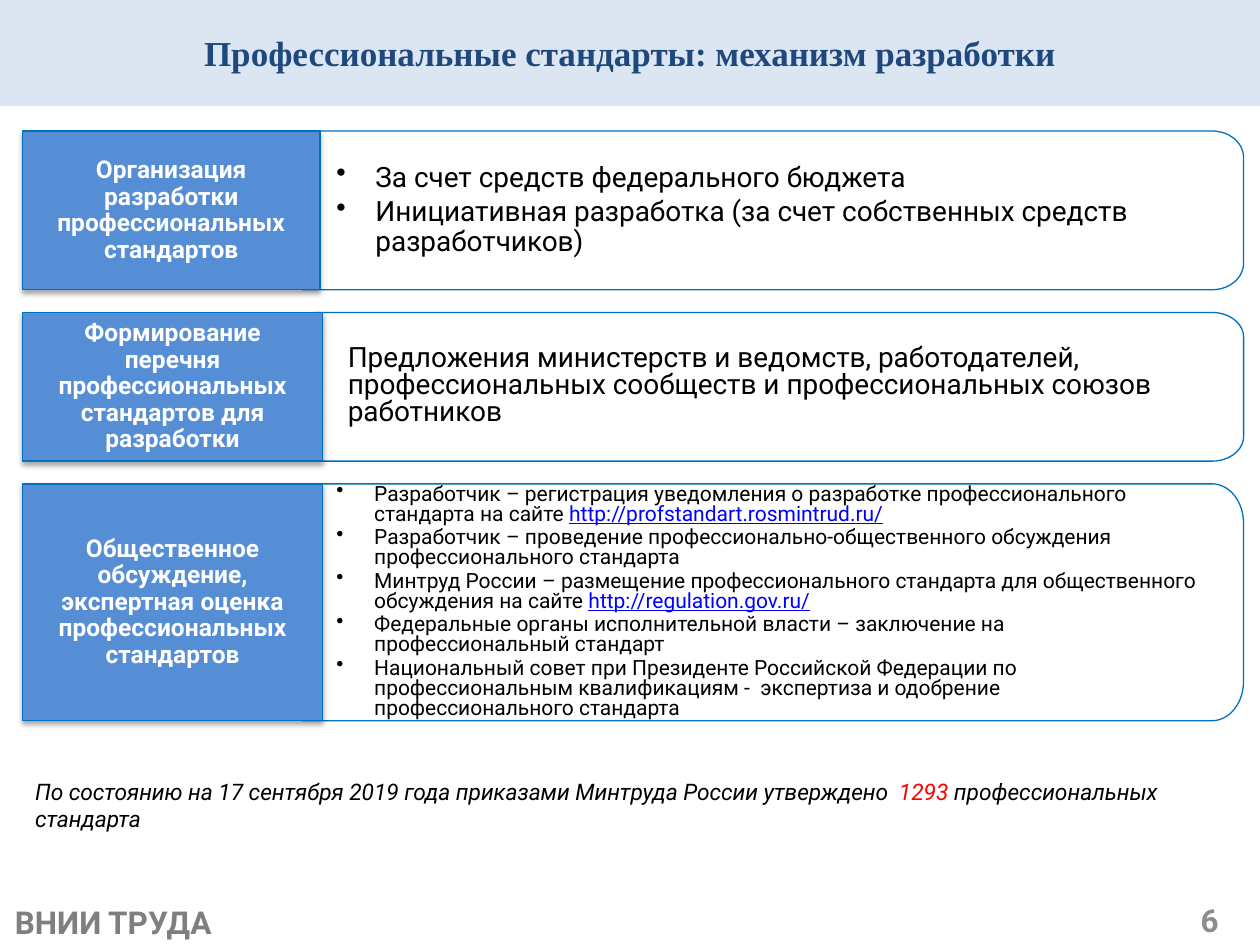
"""Builds a slide on how professional standards are developed."""
from dataclasses import dataclass
from math import cos, pi, sin

from lxml import etree
from pptx import Presentation
from pptx.dml.color import RGBColor
from pptx.enum import shapes, text
from pptx.oxml import ns
from pptx.util import Inches, Pt

BLUE, LINE, INK, LINK = "558ED5", "0070C0", "000000", "0000FF"
LEFT, RIGHT, CURVE = 0.18, 9.87, 0.25
ALIGN, ANCHOR = text.PP_ALIGN, text.MSO_ANCHOR


@dataclass
class Part:
    text: str
    color: str = ""
    line: bool = False


@dataclass
class Row:
    top: float
    high: float
    wide: float
    start: float
    label: str
    inset: tuple
    items: list
    size: int
    lead: float
    hang: float = 0


ROWS = [
    Row(1.04, 1.26, 2.36, 2.4, "Организация разработки профессиональных стандартов",
        (0.12, 0.09, 0.12, 0.09),
        [[Part("За счет средств федерального бюджета")],
         [Part("Инициативная разработка (за счет собственных средств разработчиков)")]],
        16, 0.9, 0.31),
    Row(2.48, 1.18, 2.38, 2.49,
        "Формирование перечня профессиональных стандартов для разработки",
        (0.12, 0.09, 0.12, 0.09),
        [[Part("Предложения министерств и ведомств, работодателей, "
               "профессиональных сообществ и профессиональных союзов работников")]],
        16, 0.8),
    Row(3.84, 1.88, 2.38, 2.4,
        "Общественное обсуждение, экспертная оценка профессиональных стандартов",
        (0.16, 0.12, 0.16, 0.12),
        [[Part("Разработчик – регистрация уведомления о разработке "
               "профессионального стандарта на сайте "),
          Part("http://profstandart.rosmintrud.ru/", LINK, True)],
         [Part("Разработчик – проведение профессионально-общественного "
               "обсуждения профессионального стандарта")],
         [Part("Минтруд России – размещение профессионального стандарта "
               "для общественного обсуждения на сайте "),
          Part("http://regulation.gov.ru/", LINK, True)],
         [Part("Федеральные органы исполнительной власти – заключение на "
               "профессиональный стандарт")],
         [Part("Национальный совет при Президенте Российской Федерации по "
               "профессиональным квалификациям -  экспертиза и одобрение "
               "профессионального стандарта")]],
        12, 0.8, 0.3),
]


def tint(hue: str) -> RGBColor:
    """Turn a hex string into a colour."""
    return RGBColor.from_string(hue)


def paint(shape, fill: str, line: str) -> None:
    """Set fill and outline without the theme shadow."""
    shape.shadow.inherit = False
    shape.fill.solid()
    shape.fill.fore_color.rgb = tint(fill)
    shape.line.color.rgb = tint(line)
    shape.line.width = Pt(0.75)


def shade(shape) -> None:
    """Add a soft shadow below a shape."""
    glow = shape._element.spPr.find(ns.qn("a:effectLst"))
    drop = etree.SubElement(glow, ns.qn("a:outerShdw"), blurRad=str(Pt(3.1)),
                            dist=str(Pt(1.8)), dir="5400000", rotWithShape="0")
    ink = etree.SubElement(drop, ns.qn("a:srgbClr"), val=INK)
    etree.SubElement(ink, ns.qn("a:alpha"), val="35000")


def frame(shape, anchor=ANCHOR.MIDDLE, inset: tuple = (0.1, 0.05, 0.1, 0.05)):
    """Set wrapping, anchor and insets of a text frame."""
    body = shape.text_frame
    body.word_wrap = True
    body.auto_size = text.MSO_AUTO_SIZE.NONE
    body.vertical_anchor = anchor
    (body.margin_left, body.margin_top,
     body.margin_right, body.margin_bottom) = map(Inches, inset)
    return body


def bullet(para, hang: float) -> None:
    """Give a paragraph a hanging bullet."""
    props = para._p.get_or_add_pPr()
    props.set("marL", str(Inches(hang)))
    props.set("indent", str(-Inches(hang)))
    etree.SubElement(props, ns.qn("a:buChar"), char="•")


def write(body, items: list, size: float, color: str, align=ALIGN.LEFT,
          lead: float = 1, after: float = 0, hang: float = 0,
          bold: bool = False, slant: bool = False, face: str = "Roboto") -> None:
    """Fill a text frame with one paragraph per item."""
    for spot, parts in enumerate(items):
        para = body.add_paragraph() if spot else body.paragraphs[0]
        if hang:
            bullet(para, hang)
        para.alignment, para.line_spacing = align, lead
        para.space_before, para.space_after = Pt(0), Pt(after)
        font = para.font
        font.name, font.size, font.bold, font.italic = face, Pt(size), bold, slant
        font.color.rgb = tint(color)
        for part in parts:
            run = para.add_run()
            run.text = part.text
            if part.color:
                run.font.color.rgb = tint(part.color)
            if part.line:
                run.font.underline = True


def panel(slide, row: Row):
    """Draw a panel with rounded right corners."""
    rise, base = row.high / 6, row.top + row.high
    turns = [pi / 2 * step / 16 for step in range(17)]
    edge = RIGHT - CURVE
    upper = [(edge + CURVE * sin(t), row.top + rise * (1 - cos(t))) for t in turns]
    lower = [(x, row.top + base - y) for x, y in reversed(upper)]
    first, *rest = [(Inches(x), Inches(y)) for x, y in
                    [(row.start, row.top), *upper, *lower, (row.start, base)]]
    pen = slide.shapes.build_freeform(*first)
    pen.add_line_segments(rest, close=True)
    return pen.convert_to_shape()


def draw(slide, row: Row) -> None:
    """Draw one row: its panel and its label."""
    pane = panel(slide, row)
    paint(pane, "FFFFFF", LINE)
    write(frame(pane, inset=(0.27, 0.21, 0.34, 0.21)), row.items, row.size, INK,
          lead=row.lead, after=row.size * 0.15, hang=row.hang)
    box = slide.shapes.add_shape(shapes.MSO_SHAPE.RECTANGLE, *map(
        Inches, (LEFT, row.top, row.wide, row.high)))
    paint(box, BLUE, LINE)
    shade(box)
    write(frame(box, inset=row.inset), [[Part(row.label)]], 14, "FFFFFF",
          ALIGN.CENTER, lead=0.9, bold=True)


def note(slide, place: tuple, parts: list, size: float, color: str,
         anchor=ANCHOR.MIDDLE, **style) -> None:
    """Add a plain text box."""
    box = slide.shapes.add_textbox(*map(Inches, place))
    write(frame(box, anchor), [parts], size, color, **style)


def head(slide, words: str) -> None:
    """Format the title as a band across the top."""
    band = slide.shapes.title
    band.left, band.top, band.width, band.height = map(Inches, (0, 0, 10, 0.84))
    band.fill.solid()
    band.fill.fore_color.rgb = tint("DCE6F2")
    write(frame(band), [[Part(words)]], 20, "1F497D", ALIGN.CENTER,
          bold=True, face="Times New Roman")


def main() -> None:
    """Build and save the slide."""
    deck = Presentation()
    deck.slide_width, deck.slide_height = Inches(10), Inches(7.5)
    slide = deck.slides.add_slide(deck.slide_layouts[5])
    head(slide, "Профессиональные стандарты: механизм разработки")
    for row in ROWS:
        draw(slide, row)
    note(slide, (LEFT, 6.08, 9.82, 0.62),
         [Part("По состоянию на 17 сентября 2019 года приказами Минтруда России "
               "утверждено  "), Part("1293 ", "FF0000"),
          Part("профессиональных стандарта")], 13, INK, slant=True)
    note(slide, (7.44, 7.1, 2.33, 0.4), [Part("6")], 18, "8C8C8C",
         align=ALIGN.RIGHT, bold=True)
    note(slide, (0.02, 7.12, 2.36, 0.4), [Part("ВНИИ ТРУДА")], 18, "7F7F7F",
         ANCHOR.TOP, bold=True)
    deck.save("out.pptx")


if __name__ == "__main__":
    main()
